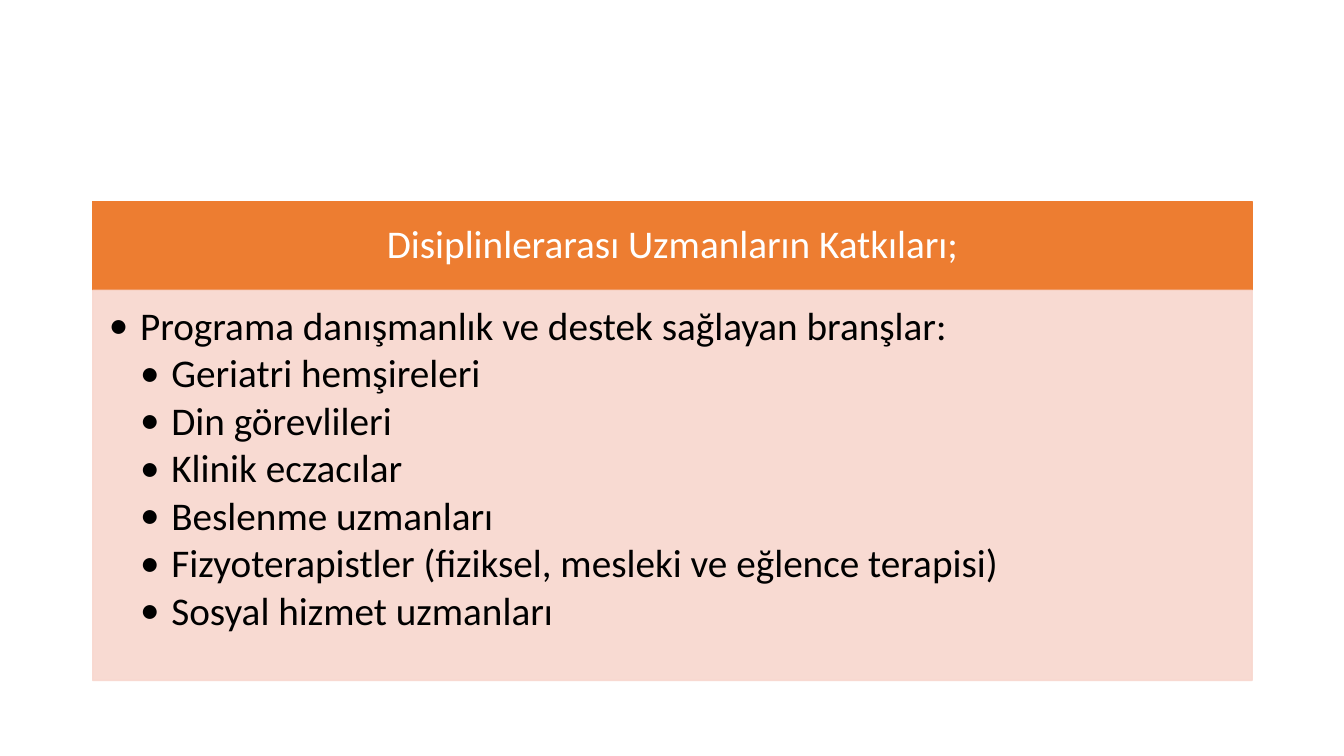
from dataclasses import dataclass

from lxml import etree
from pptx import Presentation
from pptx.dml.color import RGBColor
from pptx.enum.shapes import MSO_SHAPE
from pptx.enum.text import MSO_ANCHOR, PP_ALIGN
from pptx.oxml.ns import qn
from pptx.shapes.autoshape import Shape
from pptx.slide import Slide
from pptx.util import Emu, Pt

RECTANGLE = MSO_SHAPE.RECTANGLE
TOP, MIDDLE = MSO_ANCHOR.TOP, MSO_ANCHOR.MIDDLE
LEFT, CENTER = PP_ALIGN.LEFT, PP_ALIGN.CENTER

ORANGE = RGBColor(0xED, 0x7D, 0x31)
PINK = RGBColor(0xF8, 0xD7, 0xCE)
WHITE = RGBColor(0xFF, 0xFF, 0xFF)
BLACK = RGBColor(0x00, 0x00, 0x00)

FONT = "Calibri"
FONT_SIZE = Pt(28)
PX_PER_INCH = 100
EMU_PER_PX = 914400 // PX_PER_INCH
SLIDE_W, SLIDE_H = 1333, 750
PANEL_X, PANEL_W = 92, 1150
HEADER_Y, HEADER_H, BODY_H = 200, 88, 387
INDENT = 31


@dataclass(frozen=True)
class Line:
    text: str
    level: int = 0


@dataclass(frozen=True)
class Panel:
    y: int
    h: int
    color: RGBColor
    opacity: int
    text_color: RGBColor
    anchor: MSO_ANCHOR
    align: PP_ALIGN
    insets: tuple[int, int, int, int]
    space_after: float
    bulleted: bool
    lines: list[Line]


SPECIALISTS = [
    "Geriatri hemşireleri",
    "Din görevlileri",
    "Klinik eczacılar",
    "Beslenme uzmanları",
    "Fizyoterapistler (fiziksel, mesleki ve eğlence terapisi)",
    "Sosyal hizmet uzmanları",
]

PANELS = [
    Panel(HEADER_Y, HEADER_H, ORANGE, 100, WHITE, MIDDLE, CENTER,
          (22, 12, 22, 12), 0, False,
          [Line("Disiplinlerarası Uzmanların Katkıları;")]),
    Panel(HEADER_Y + HEADER_H, BODY_H, PINK, 90, BLACK, TOP, LEFT,
          (16, 16, 22, 24), 3.7, True,
          [Line("Programa danışmanlık ve destek sağlayan branşlar:"),
           *(Line(name, 1) for name in SPECIALISTS)]),
]


def px(value: int) -> Emu:
    return Emu(value * EMU_PER_PX)


def set_opacity(s: Shape, percent: int) -> None:
    """Apply the opacity to both the fill and the outline."""
    for color in s._element.spPr.iter(qn("a:srgbClr")):
        etree.SubElement(color, qn("a:alpha"), val=str(percent * 1000))


def add_bullet(p, level: int) -> None:
    p.level = level
    pPr = p._p.get_or_add_pPr()
    pPr.set("marL", str(px(INDENT * (level + 1))))
    pPr.set("indent", str(-px(INDENT)))
    etree.SubElement(pPr, qn("a:buFont"), typeface=FONT)
    etree.SubElement(pPr, qn("a:buChar"), char="•")


def write_lines(s: Shape, panel: Panel) -> None:
    tf = s.text_frame
    tf.word_wrap = True
    tf.vertical_anchor = panel.anchor
    tf.margin_left, tf.margin_top, tf.margin_right, tf.margin_bottom = map(px, panel.insets)
    tf.text = "\n".join(line.text for line in panel.lines)
    for p, line in zip(tf.paragraphs, panel.lines):
        p.alignment = panel.align
        p.line_spacing = 0.9
        p.space_after = Pt(panel.space_after)
        if panel.bulleted:
            add_bullet(p, line.level)
        for r in p.runs:
            r.font.name = FONT
            r.font.size = FONT_SIZE
            r.font.color.rgb = panel.text_color


def draw_panel(slide: Slide, panel: Panel) -> None:
    s = slide.shapes.add_shape(RECTANGLE, px(PANEL_X), px(panel.y), px(PANEL_W), px(panel.h))
    s.shadow.inherit = False
    s.fill.solid()
    s.fill.fore_color.rgb = panel.color
    s.line.color.rgb = panel.color
    s.line.width = Pt(1)
    if panel.opacity < 100:
        set_opacity(s, panel.opacity)
    write_lines(s, panel)


def main() -> None:
    prs = Presentation()
    prs.slide_width, prs.slide_height = px(SLIDE_W), px(SLIDE_H)
    slide = prs.slides.add_slide(prs.slide_layouts[6])
    for panel in PANELS:
        draw_panel(slide, panel)
    prs.save("out.pptx")


if __name__ == "__main__":
    main()
